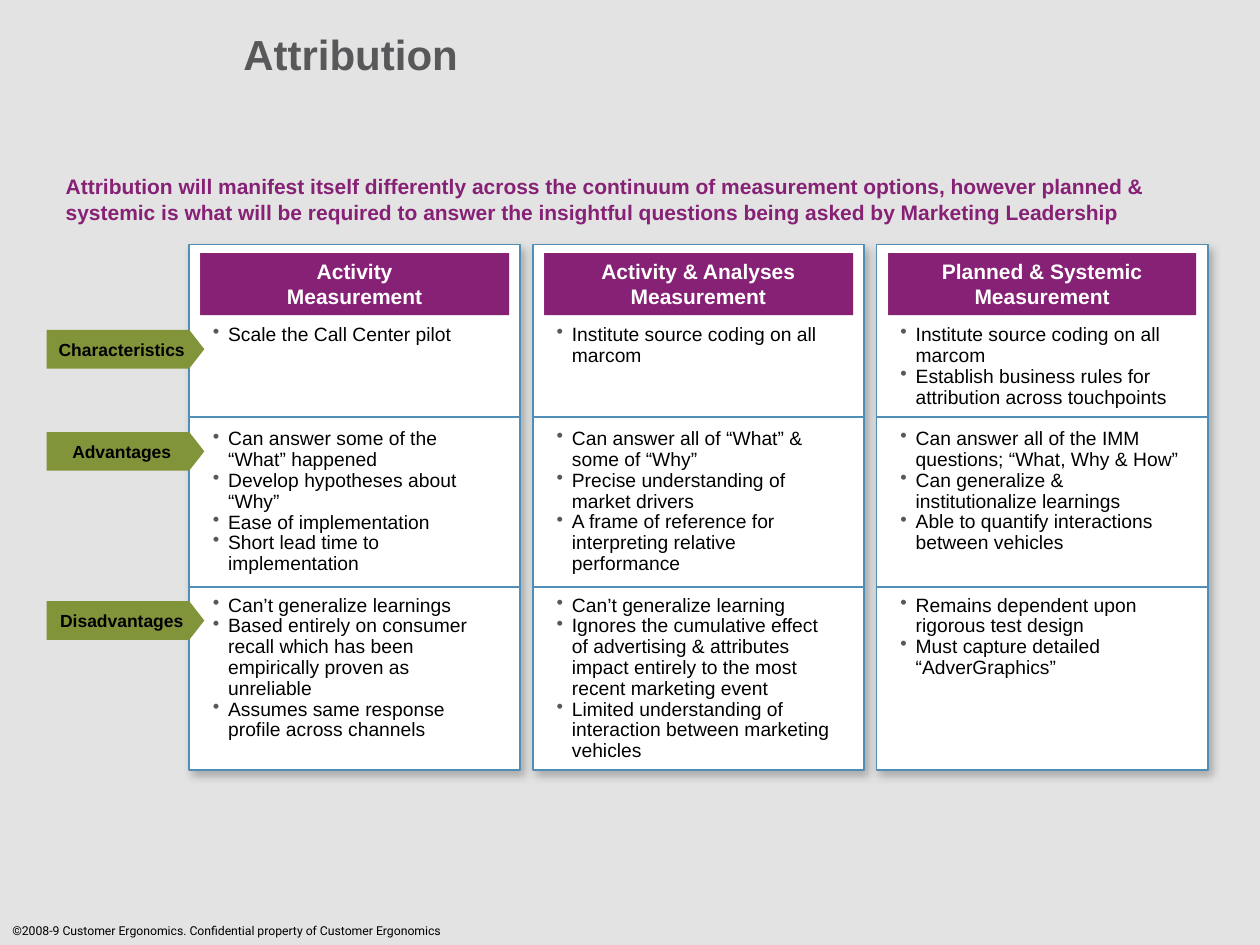
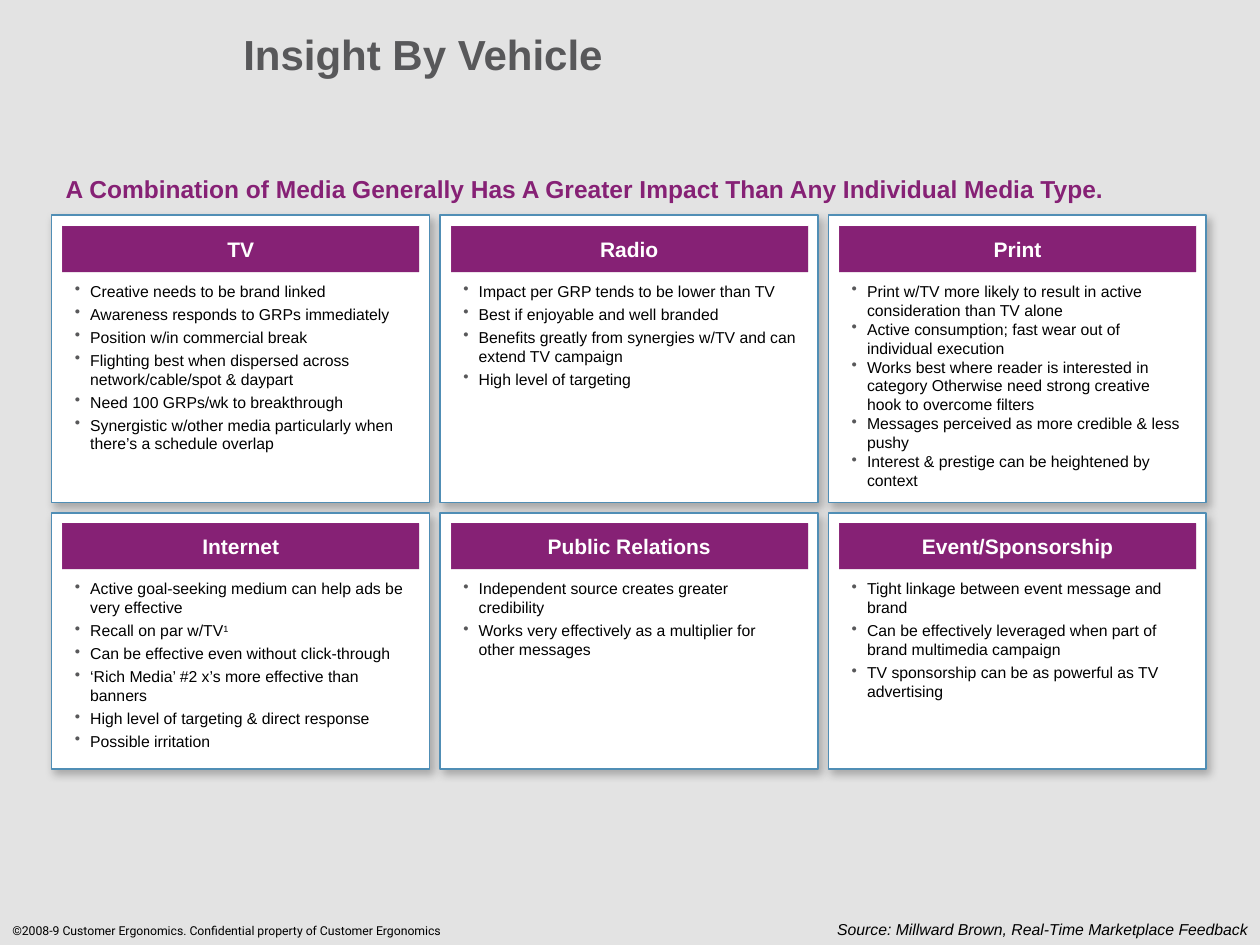
from lxml import etree
from pptx import Presentation
from pptx.dml.color import RGBColor
from pptx.enum.shapes import MSO_CONNECTOR, MSO_SHAPE
from pptx.enum.text import MSO_ANCHOR, MSO_AUTO_SIZE, PP_ALIGN
from pptx.oxml.ns import qn
from pptx.util import Cm, Pt

RECT, BEVEL, PENTAGON = MSO_SHAPE.RECTANGLE, MSO_SHAPE.BEVEL, MSO_SHAPE.PENTAGON
STRAIGHT = MSO_CONNECTOR.STRAIGHT
MIDDLE, TOP = MSO_ANCHOR.MIDDLE, MSO_ANCHOR.TOP
LEFT, CENTER, RIGHT = PP_ALIGN.LEFT, PP_ALIGN.CENTER, PP_ALIGN.RIGHT
FIT, NO_FIT = MSO_AUTO_SIZE.SHAPE_TO_FIT_TEXT, MSO_AUTO_SIZE.NONE

COLORS = {
    "background": "E3E3E3",
    "gray": "58585A",
    "purple": "862175",
    "blue": "508EB5",
    "green": "81943A",
    "white": "FFFFFF",
    "black": "000000",
}
COPYRIGHT = "©2008-9 Customer Ergonomics. Confidential property of Customer Ergonomics"

MEASUREMENTS = [
    (["Activity", "Measurement"], [
        (0, ["Scale the Call Center pilot"]),
        (4, ["Can answer some of the “What” happened",
             "Develop hypotheses about “Why”",
             "Ease of implementation",
             "Short lead time to implementation"]),
        (1, ["Can’t generalize learnings",
             "Based entirely on consumer recall which has been empirically proven as unreliable",
             "Assumes same response profile across channels"]),
    ]),
    (["Activity & Analyses", "Measurement"], [
        (0, ["Institute source coding on all marcom"]),
        (3, ["Can answer all of “What” & some of “Why”",
             "Precise understanding of market drivers",
             "A frame of reference for interpreting relative performance"]),
        (1, ["Can’t generalize learning",
             "Ignores the cumulative effect of advertising & attributes impact entirely "
             "to the most recent marketing event",
             "Limited understanding of interaction between marketing vehicles"]),
    ]),
    (["Planned & Systemic", "Measurement"], [
        (0, ["Institute source coding on all marcom",
             "Establish business rules for attribution across touchpoints"]),
        (1, ["Can answer all of the IMM questions; “What, Why & How”",
             "Can generalize & institutionalize learnings",
             "Able to quantify interactions between vehicles"]),
        (2, ["Remains dependent upon rigorous test design",
             "Must capture detailed “AdverGraphics”"]),
    ]),
]
ROW_TAGS = [("Characteristics", 6.65), ("Advantages", 8.71), ("Disadvantages", 12.12)]

VEHICLE_ROWS = [
    (4.34, 5.79, [
        ("TV", 2.3, ["Creative needs to be brand linked",
                     "Awareness responds to GRPs immediately",
                     "Position w/in commercial break",
                     "Flighting best when dispersed across network/cable/spot & daypart",
                     "Need 100 GRPs/wk to breakthrough",
                     "Synergistic w/other media particularly when there’s a schedule overlap"]),
        ("Radio", 2.3, ["Impact per GRP tends to be lower than TV",
                        "Best if enjoyable and well branded",
                        "Benefits greatly from synergies w/TV and can extend TV campaign",
                        "High level of targeting"]),
        ("Print", 0, ["Print w/TV more likely to result in active consideration than TV alone",
                      "Active consumption; fast wear out of individual execution",
                      "Works best where reader is interested in category Otherwise need "
                      "strong creative hook to overcome filters",
                      "Messages perceived as more credible & less pushy",
                      "Interest & prestige can be heightened by context"]),
    ]),
    (10.34, 5.16, [
        ("Internet", 2.3, ["Active goal-seeking medium can help ads be very effective",
                           "Recall on par w/TV^1",
                           "Can be effective even without click-through",
                           "‘Rich Media’ #2 x’s more effective than banners",
                           "High level of targeting & direct response",
                           "Possible irritation"]),
        ("Public Relations", 2.3, ["Independent source creates greater credibility",
                                   "Works very effectively as a multiplier for other messages"]),
        ("Event/Sponsorship", 2.3, ["Tight linkage between event message and brand",
                                    "Can be effectively leveraged when part of brand multimedia campaign",
                                    "TV sponsorship can be as powerful as TV advertising"]),
    ]),
]


class Deck:
    """Holds the deck's style and its current slide."""

    def __init__(self):
        self.prs = Presentation()
        self.prs.slide_width, self.prs.slide_height = Cm(25.4), Cm(19.05)
        fill = self.prs.slide_master.background.fill
        fill.solid()
        fill.fore_color.rgb = self.color("background")
        self.s = None

    def color(self, name):
        return RGBColor.from_string(COLORS[name])

    def place(self, sp, x, y, w, h):
        sp.left, sp.top, sp.width, sp.height = Cm(x), Cm(y), Cm(w), Cm(h)

    def add_text(self, p, text, size, color="black", bold=False, italic=False, font="Arial"):
        for i, part in enumerate(text.split("^")):
            r = p.add_run()
            r.text = part
            r.font.name, r.font.size = font, Pt(size)
            r.font.bold, r.font.italic = bold, italic
            r.font.color.rgb = self.color(color)
            if i:
                r._r.get_or_add_rPr().set("baseline", "30000")

    def slide(self, title, message, size, height):
        self.s = self.prs.slides.add_slide(self.prs.slide_layouts[1])
        self.label(COPYRIGHT, 0, 18.49, 9.91, 0.56, 7, font="Roboto")

        sp = self.s.shapes.title
        self.place(sp, 4.65, 0, 20.75, 2.34)
        tf = sp.text_frame
        tf.auto_size, tf.vertical_anchor = NO_FIT, MIDDLE
        tf.margin_top = tf.margin_bottom = 0
        p = tf.paragraphs[0]
        p.alignment, p.line_spacing = LEFT, 0.8
        self.add_text(p, title, 24, "gray", bold=True)

        sp = self.s.placeholders[1]
        self.place(sp, 1.07, 3.38, 23.29, height)
        tf = sp.text_frame
        tf.auto_size, tf.vertical_anchor = NO_FIT, TOP
        p = tf.paragraphs[0]
        self.bullet(p, 0)
        p.alignment, p.space_before = LEFT, Pt(0)
        self.add_text(p, message, size, "purple", bold=True)

    def bullet(self, p, indent, char=None):
        pPr = p._p.get_or_add_pPr()
        pPr.set("marL", str(Cm(indent)))
        pPr.set("indent", str(-Cm(indent)))
        if char is None:
            etree.SubElement(pPr, qn("a:buNone"))
            return
        clr = etree.SubElement(pPr, qn("a:buClr"))
        etree.SubElement(clr, qn("a:srgbClr"), val=COLORS["gray"])
        etree.SubElement(pPr, qn("a:buChar"), char=char)

    def textbox(self, x, y, w, h):
        tf = self.s.shapes.add_textbox(Cm(x), Cm(y), Cm(w), Cm(h)).text_frame
        tf.word_wrap, tf.auto_size = True, FIT
        return tf

    def label(self, text, x, y, w, h, size, align=LEFT, **style):
        p = self.textbox(x, y, w, h).paragraphs[0]
        p.alignment = align
        self.add_text(p, text, size, **style)

    def bullets(self, items, x, y, w, h, size, line_spacing=1.0):
        tf = self.textbox(x, y, w, h)
        for i, (text, before) in enumerate(items):
            p = tf.add_paragraph() if i else tf.paragraphs[0]
            self.bullet(p, 0.31, "•")
            p.line_spacing = line_spacing
            p.space_before = Pt(before if i else 0)
            self.add_text(p, text, size)

    def shape(self, kind, x, y, w, h, fill):
        sp = self.s.shapes.add_shape(kind, Cm(x), Cm(y), Cm(w), Cm(h))
        sp.shadow.inherit = False
        sp.fill.solid()
        sp.fill.fore_color.rgb = self.color(fill)
        sp.line.fill.background()
        return sp

    def card(self, x, y, w, h):
        sp = self.shape(RECT, x, y, w, h, "white")
        sp.line.color.rgb, sp.line.width = self.color("blue"), Pt(1)
        effects = sp._element.spPr.find(qn("a:effectLst"))
        shadow = etree.SubElement(effects, qn("a:outerShdw"), blurRad=str(Pt(5)),
                                  dist=str(Pt(3)), dir=str(55 * 60000), algn="ctr",
                                  rotWithShape="0")
        clr = etree.SubElement(shadow, qn("a:srgbClr"), val=COLORS["black"])
        etree.SubElement(clr, qn("a:alpha"), val="25000")

    def caption(self, sp, lines, size, color, adjustment, wrap=False):
        sp.adjustments[0] = adjustment
        tf = sp.text_frame
        tf.word_wrap, tf.vertical_anchor = wrap, MIDDLE
        for i, line in enumerate(lines):
            p = tf.add_paragraph() if i else tf.paragraphs[0]
            p.alignment = CENTER
            self.add_text(p, line, size, color, bold=True)

    def header(self, lines, x, y, w, h):
        sp = self.shape(BEVEL, x, y, w, h, "purple")
        self.caption(sp, lines, 12, "white", 0, wrap=len(lines) > 1)

    def tag(self, text, y):
        sp = self.shape(PENTAGON, 0.94, y, 3.18, 0.78, "green")
        self.caption(sp, [text], 10, "black", 0.39)

    def divider(self, x, y, w):
        cx = self.s.shapes.add_connector(STRAIGHT, Cm(x), Cm(y), Cm(x + w), Cm(y))
        cx.line.color.rgb, cx.line.width = self.color("blue"), Pt(1)
        etree.SubElement(cx._element.spPr, qn("a:effectLst"))


def attribution(deck):
    deck.slide("Attribution",
               "Attribution will manifest itself differently across the continuum of measurement "
               "options, however planned & systemic is what will be required to answer the "
               "insightful questions being asked by Marketing Leadership", 12, 1.52)
    left, pitch, width, line_height = 3.81, 6.93, 6.68, 11.9
    for col, (heading, groups) in enumerate(MEASUREMENTS):
        x = left + col * pitch
        deck.card(x, 4.93, width, 10.59)
        deck.header(heading, x + 0.23, 5.1, 6.22, 1.25)
        items = [(text, 0 if i else blanks * line_height)
                 for blanks, texts in groups for i, text in enumerate(texts)]
        deck.bullets(items, x + 0.23, 6.43, 6.2, 8.8, 11, 0.9)
    for text, y in ROW_TAGS:
        deck.tag(text, y)
    for y in (8.41, 11.84):
        for col in range(len(MEASUREMENTS)):
            deck.divider(left + col * pitch, y, width)


def insight_by_vehicle(deck):
    deck.slide("Insight By Vehicle",
               "A Combination of Media Generally Has A Greater Impact Than Any Individual "
               "Media Type.", 14, 0.99)
    for y, height, vehicles in VEHICLE_ROWS:
        for col, (name, gap, points) in enumerate(vehicles):
            x = 1.04 + col * 7.83
            deck.card(x, y, 7.62, height)
            deck.header([name], x + 0.22, y + 0.21, 7.19, 0.93)
            deck.bullets([(point, gap) for point in points],
                         x + 0.22, y + 1.21, 7.2, height - 1.4, 9)
    deck.label("Source: Millward Brown, Real-Time Marketplace Feedback",
               14.6, 18.41, 10.8, 0.64, 9, RIGHT, italic=True)


def main():
    deck = Deck()
    attribution(deck)
    insight_by_vehicle(deck)
    deck.prs.save("out.pptx")


if __name__ == "__main__":
    main()
